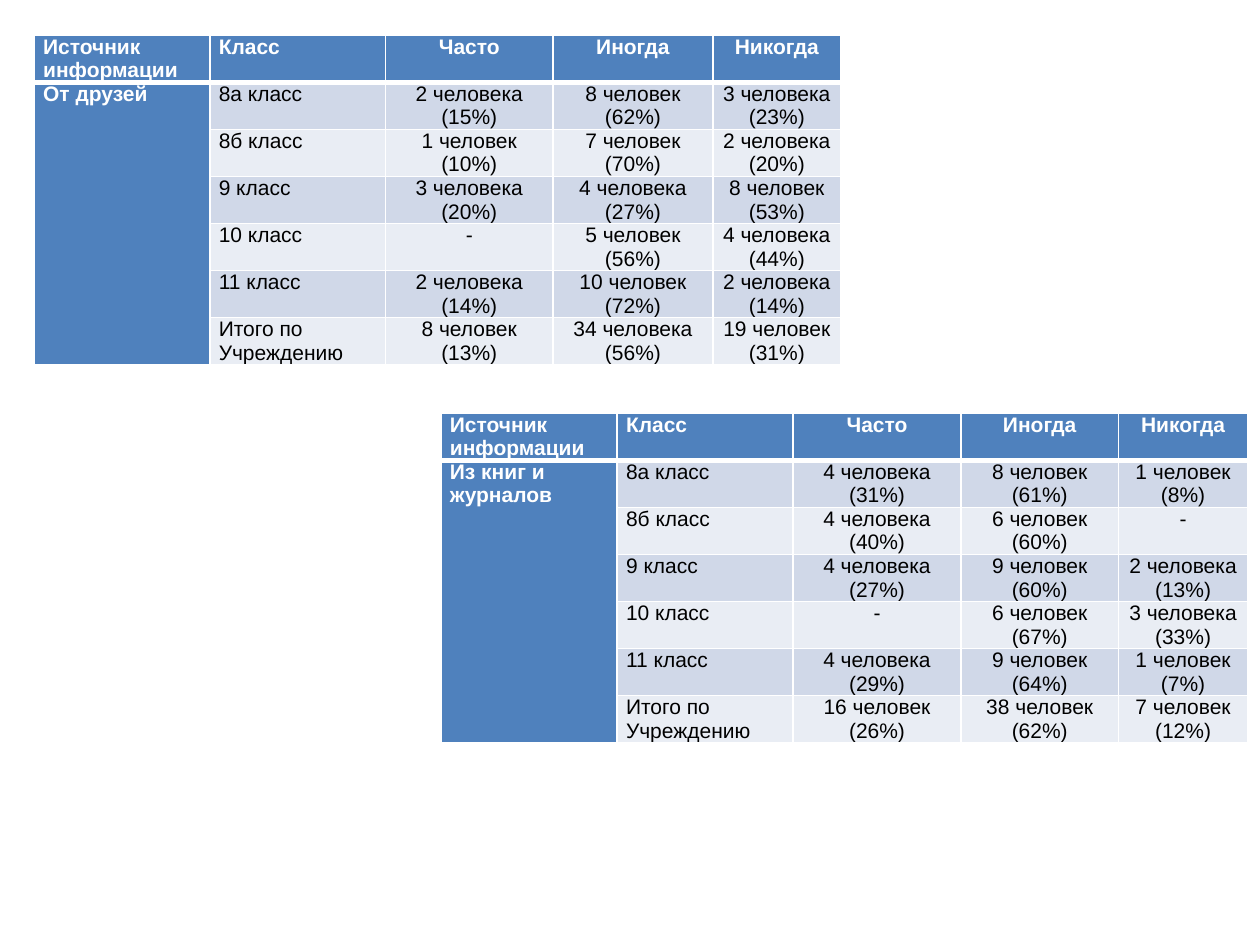
from dataclasses import dataclass

from lxml.etree import SubElement
from pptx import Presentation
from pptx.dml.color import RGBColor as RGB
from pptx.enum.text import PP_ALIGN as Align
from pptx.oxml.ns import qn
from pptx.util import Cm, Pt


@dataclass(frozen=True)
class Theme:
    """Colours, type and line widths of the survey tables."""
    font: str = "Arial"
    size: int = 12
    heading_fill: str = "4F81BD"
    heading_text: str = "FFFFFF"
    body_text: str = "000000"
    bands: tuple = ("D0D8E8", "E9EDF4")
    border: str = "FFFFFF"
    thin: int = 1
    thick: int = 3


THEME = Theme()
HEADINGS = ["Источник информации", "Класс", "Часто", "Иногда", "Никогда"]
TOTAL = "Итого по Учреждению"
CLASSES = ["8а класс", "8б класс", "9 класс", "10 класс", "11 класс", TOTAL]
ROW_HEIGHT = Cm(0.94)

FRIENDS = [
    [(2, 15), (8, 62), (3, 23)],
    [(1, 10), (7, 70), (2, 20)],
    [(3, 20), (4, 27), (8, 53)],
    [None, (5, 56), (4, 44)],
    [(2, 14), (10, 72), (2, 14)],
    [(8, 13), (34, 56), (19, 31)],
]
BOOKS = [
    [(4, 31), (8, 61), (1, 8)],
    [(4, 40), (6, 60), None],
    [(4, 27), (9, 60), (2, 13)],
    [None, (6, 67), (3, 33)],
    [(4, 29), (9, 64), (1, 7)],
    [(16, 26), (38, 62), (7, 12)],
]


def answer_text(answer):
    """Word a count and its percentage on two lines, or a dash for none."""
    if answer is None:
        return "-"
    count, percent = answer
    noun = "человека" if count % 10 in (2, 3, 4) else "человек"
    return f"{count} {noun}\n({percent}%)"


def draw_borders(cell, top, bottom):
    """Line all four sides of a cell."""
    sides = {"L": THEME.thin, "R": THEME.thin, "T": top, "B": bottom}
    properties = cell._tc.get_or_add_tcPr()
    for side, width in sides.items():
        line = SubElement(properties, qn(f"a:ln{side}"), w=str(Pt(width)))
        fill = SubElement(line, qn("a:solidFill"))
        SubElement(fill, qn("a:srgbClr"), val=THEME.border)


def style_cell(cell, row, column):
    """Give a cell its margins, borders, fill and type by its place."""
    is_heading = row == 0 or column == 0
    cell.margin_left = cell.margin_right = Cm(0.18)
    cell.margin_top = cell.margin_bottom = 0
    draw_borders(cell, THEME.thick if row == 1 else THEME.thin,
                 THEME.thick if row == 0 else THEME.thin)
    cell.fill.solid()
    fill = THEME.heading_fill if is_heading else THEME.bands[(row - 1) % 2]
    cell.fill.fore_color.rgb = RGB.from_string(fill)
    color = THEME.heading_text if is_heading else THEME.body_text
    for paragraph in cell.text_frame.paragraphs:
        paragraph.alignment = Align.CENTER if column > 1 else Align.LEFT
        for run in paragraph.runs:
            run.font.name = THEME.font
            run.font.size = Pt(THEME.size)
            run.font.bold = is_heading
            run.font.color.rgb = RGB.from_string(color)


def add_survey(slide, source, answers, left, top, widths):
    """Add the table of answers about one source of information."""
    texts = [HEADINGS]
    for grade, counts in zip(CLASSES, answers):
        texts.append(["", grade, *map(answer_text, counts)])
    texts[1][0] = source
    survey = slide.shapes.add_table(
        len(texts), len(HEADINGS), Cm(left), Cm(top),
        Cm(sum(widths)), ROW_HEIGHT * len(texts)).table
    for column, width in zip(survey.columns, widths):
        column.width = Cm(width)
    for row, line in enumerate(texts):
        for column, text in enumerate(line):
            cell = survey.cell(row, column)
            cell.text_frame.text = text
            style_cell(cell, row, column)
    survey.cell(1, 0).merge(survey.cell(len(texts) - 1, 0))


def main():
    """Build the slide with both survey tables."""
    deck = Presentation()
    deck.slide_width, deck.slide_height = Cm(25.4), Cm(19.05)
    slide = deck.slides.add_slide(deck.slide_layouts[6])
    add_survey(slide, "От друзей", FRIENDS, 0.69, 0.71,
               [3.54, 3.54, 3.38, 3.22, 2.58])
    add_survey(slide, "Из книг и журналов", BOOKS, 8.89, 8.33,
               [3.55, 3.55, 3.38, 3.18, 2.6])
    deck.save("out.pptx")


if __name__ == "__main__":
    main()
